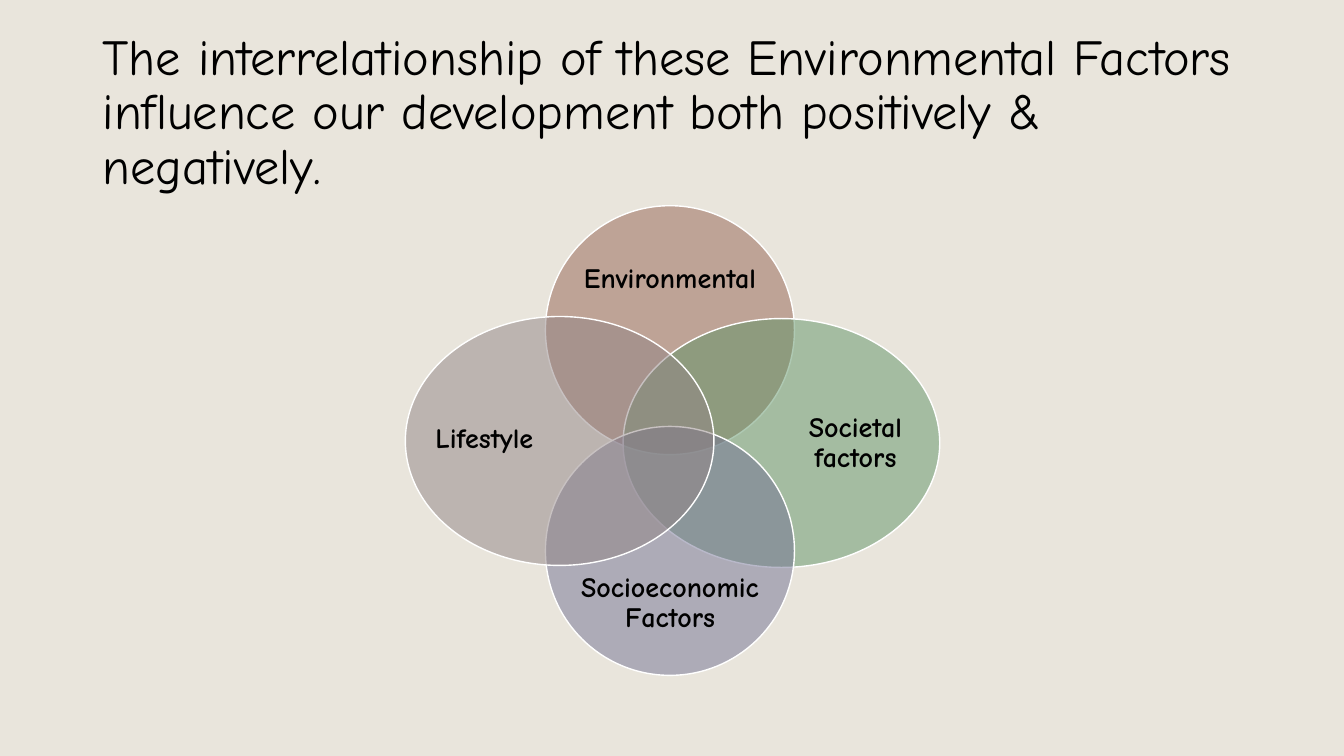
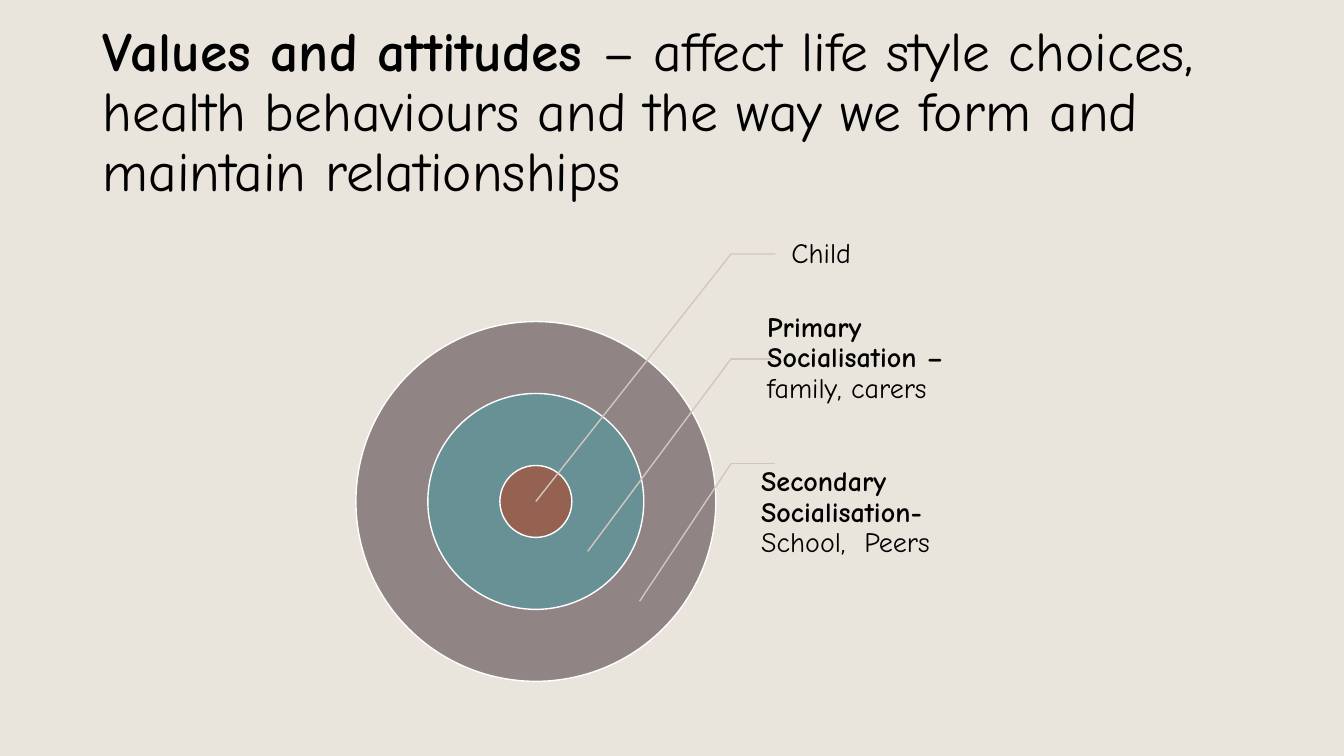
"""Build two slides on the factors that shape development."""
from typing import Any, NamedTuple

from lxml import etree
from pptx import Presentation, util as u
from pptx.dml.color import RGBColor
from pptx.enum import shapes as s, text as t
from pptx.oxml import ns

WIDE, HIGH = 13.33, 7.5
FONT = "Comic Neue"
HUES = {
    "paper": "E9E5DC", "ink": "000000", "white": "FFFFFF", "rule": "D3C5C2",
    "rust": "956251", "green": "609568", "violet": "737294",
    "taupe": "918485", "teal": "689195",
}


class Box(NamedTuple):
    """Left, top, width and height as percentages of the slide."""
    x: float
    y: float
    w: float
    h: float


class Run(NamedTuple):
    """A stretch of text of one weight."""
    text: str
    bold: bool = False


class Oval(NamedTuple):
    """A circle or ellipse, by its centre and size in percent."""
    x: float
    y: float
    w: float
    h: float
    hue: str


class Tag(NamedTuple):
    """A label, by its centre and size in percent."""
    text: str
    x: float
    y: float
    w: float
    h: float


class Note(NamedTuple):
    """A callout label beside the rings."""
    x: float
    y: float
    w: float
    runs: list[Run]


def across(share: float) -> u.Length:
    """Turn a percentage of the width into a length."""
    return u.Inches(WIDE * share / 100)


def down(share: float) -> u.Length:
    """Turn a percentage of the height into a length."""
    return u.Inches(HIGH * share / 100)


def place(box: Box) -> tuple[u.Length, ...]:
    """Turn a box into lengths."""
    return across(box.x), down(box.y), across(box.w), down(box.h)


def mid(x: float, y: float, w: float, h: float) -> Box:
    """Return the box centred on a point."""
    return Box(x - w / 2, y - h / 2, w, h)


def paint(hue: str) -> RGBColor:
    """Look up a colour by name."""
    return RGBColor.from_string(HUES[hue])


def write(slide: Any, box: Box, runs: list[Run], *, size: float = 20,
          align: Any = t.PP_ALIGN.LEFT, wrap: bool = True,
          pad: tuple[float, ...] = (0, 0, 0, 0)) -> Any:
    """Add a text box whose text is centred in height."""
    shape = slide.shapes.add_textbox(*place(box))
    frame = shape.text_frame
    frame.word_wrap = wrap
    frame.vertical_anchor = t.MSO_ANCHOR.MIDDLE
    (frame.margin_left, frame.margin_top,
     frame.margin_right, frame.margin_bottom) = map(u.Inches, pad)
    para = frame.paragraphs[0]
    para.alignment, para.line_spacing = align, 0.9
    for part in runs:
        run = para.add_run()
        run.text = part.text
        run.font.name, run.font.size = FONT, u.Pt(size)
        run.font.bold = part.bold
        run.font.color.rgb = paint("ink")
    return shape


def draw(slide: Any, oval: Oval, alpha: int = 100) -> None:
    """Add an ellipse with a white outline."""
    box = mid(oval.x, oval.y, oval.w, oval.h)
    shape = slide.shapes.add_shape(s.MSO_SHAPE.OVAL, *place(box))
    shape.shadow.inherit = False
    shape.fill.solid()
    shape.fill.fore_color.rgb = paint(oval.hue)
    if alpha < 100:
        fill = shape._element.spPr.find(ns.qn("a:solidFill"))
        etree.SubElement(fill[0], ns.qn("a:alpha"), val=str(alpha * 1000))
    shape.line.color.rgb = paint("white")
    shape.line.width = u.Pt(1)


def link(slide: Any, start: tuple[float, float],
         end: tuple[float, float]) -> Any:
    """Add a thin straight line between two points."""
    line = slide.shapes.add_connector(
        s.MSO_CONNECTOR.STRAIGHT, across(start[0]), down(start[1]),
        across(end[0]), down(end[1]))
    line.line.color.rgb = paint("rule")
    line.line.width = u.Pt(1)
    etree.SubElement(line._element.spPr, ns.qn("a:effectLst"))
    return line


def begin(deck: Any, runs: list[Run], size: float) -> Any:
    """Add a blank slide with a title."""
    slide = deck.slides.add_slide(deck.slide_layouts[6])
    write(slide, Box(6.9, 5.33, 86.25, 19.33), runs, size=size,
          pad=(0.1, 0.05, 0.1, 0.05))
    return slide


def venn(deck: Any) -> None:
    """Build the slide of four overlapping factors."""
    slide = begin(deck, [Run(
        "The interrelationship of these Environmental Factors influence our "
        "development both positively & negatively.")], 36)
    x, y, w, h, rise = 49.85, 58.27, 18.53, 32.93, 14.6
    pairs = [
        (Oval(x, y - rise, w, h, "rust"),
         Tag("Environmental", x, 37, 14.25, 10.53)),
        (Oval(58.14, 58.6, 23.56, h, "green"),
         Tag("Societal factors", 63.65, 58.67, 9.08, 25.33)),
        (Oval(x, y + rise, w, h, "violet"),
         Tag("Socioeconomic Factors", x, 79.8, 14.25, 10.53)),
    ]
    for oval, tag in pairs:
        draw(slide, oval, 50)
        write(slide, mid(*tag[1:]), [Run(tag.text, True)],
              align=t.PP_ALIGN.CENTER)
    draw(slide, Oval(41.64, 58.33, 22.96, h, "taupe"), 50)
    write(slide, Box(31.66, 55.2, 10.43, 5.87), [Run("Lifestyle", True)],
          wrap=False, pad=(0.1, 0.05, 0.1, 0.05))


def rings(deck: Any) -> None:
    """Build the slide of rings around the child."""
    slide = begin(deck, [
        Run("Values and attitudes ", True),
        Run("– affect life style choices, health behaviours and the way we "
            "form and maintain relationships")], 39.6)
    x, y, w = 39.87, 66.33, 26.78
    for hue, part in (("taupe", 1), ("teal", 0.6), ("rust", 0.2)):
        size = w * part
        draw(slide, Oval(x, y, size, size * WIDE / HIGH, hue))
    bend, stop, row = 54.39, 57.69, 13.87
    notes = [
        Note(stop, 26.67, 13.35, [Run("Child")]),
        Note(55.89, 40.53, 17.1, [
            Run("Primary Socialisation – ", True), Run("family, carers")]),
        Note(55.44, 60.93, 18.23, [
            Run("Secondary Socialisation- ", True), Run("School,  Peers")]),
    ]
    for i, note in enumerate(notes):
        label = write(slide, Box(note.x, note.y, note.w, row), note.runs,
                      pad=(0.16, 0.03, 0.03, 0.03))
        level = 33.6 + row * i
        arm = link(slide, (bend, level), (stop, level))
        if note.x == stop:
            arm.end_connect(label, 1)
        link(slide, (bend, level), (x + 3.86 * i, y + 6.6 * i))


def main() -> None:
    """Build and save the deck."""
    deck = Presentation()
    deck.slide_width, deck.slide_height = u.Inches(WIDE), u.Inches(HIGH)
    back = deck.slide_master.background.fill
    back.solid()
    back.fore_color.rgb = paint("paper")
    venn(deck)
    rings(deck)
    deck.save("out.pptx")


if __name__ == "__main__":
    main()
